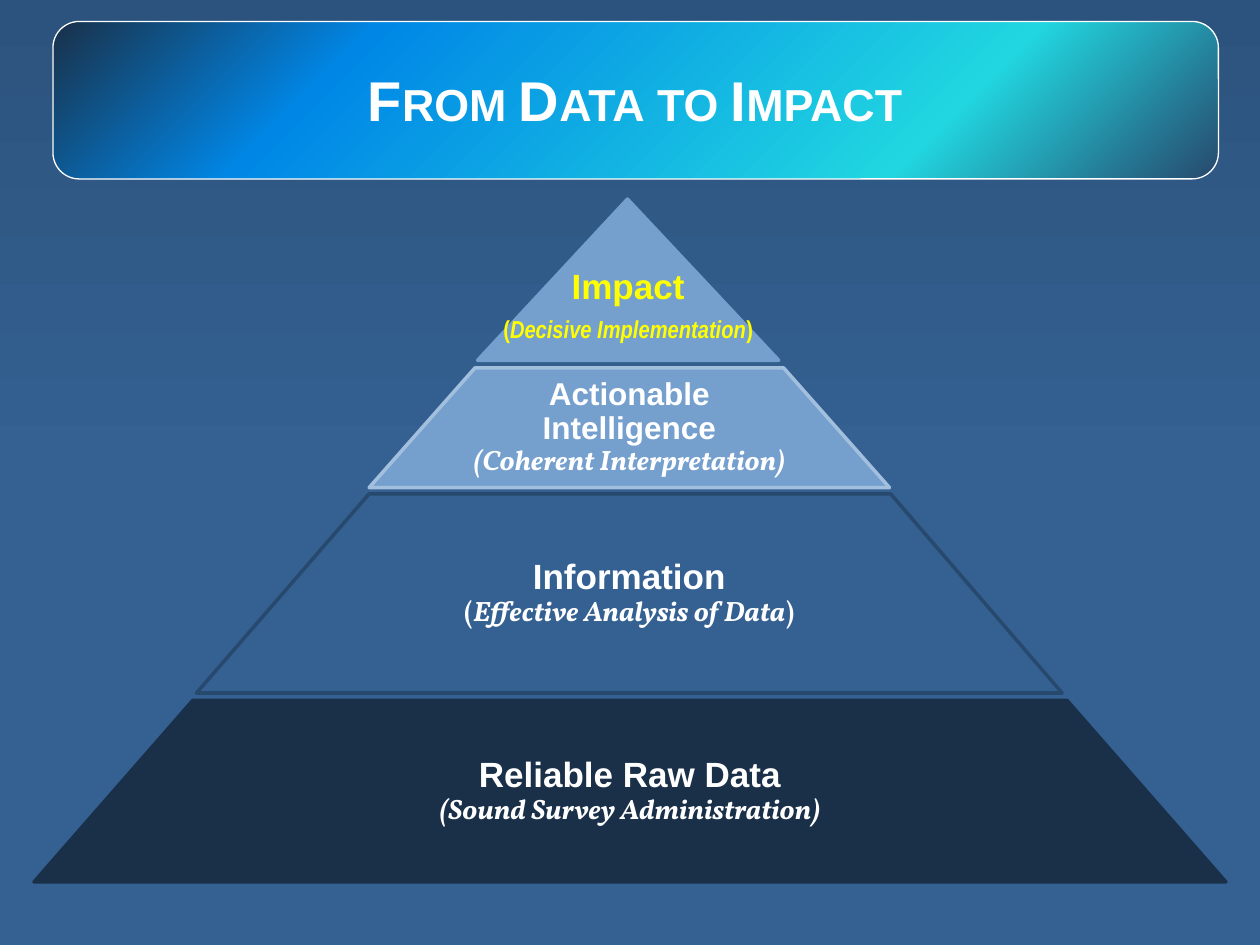
from copy import deepcopy

from pptx import Presentation
from pptx.dml.color import RGBColor
from pptx.enum.shapes import MSO_SHAPE
from pptx.enum.text import MSO_ANCHOR, PP_ALIGN
from pptx.oxml.ns import qn
from pptx.util import Inches, Pt

WHITE = RGBColor(0xFF, 0xFF, 0xFF)
YELLOW = RGBColor(0xFF, 0xFF, 0x00)
NAVY = RGBColor(0x1A, 0x30, 0x49)
SLATE = RGBColor(0x27, 0x49, 0x6D)
DEEP = RGBColor(0x2C, 0x53, 0x7D)
STEEL = RGBColor(0x34, 0x61, 0x92)
SKY = RGBColor(0x75, 0xA0, 0xCE)
PALE = RGBColor(0xA3, 0xBF, 0xDE)
AZURE = RGBColor(0x00, 0x87, 0xE6)
TURQUOISE = RGBColor(0x21, 0xD6, 0xE0)


def set_gradient(fill, element, angle, stops):
    fill.gradient()
    fill.gradient_angle = angle
    gs_list = next(element.iter(qn("a:gsLst")))
    while len(gs_list) < len(stops):
        gs_list.append(deepcopy(gs_list[0]))
    for stop, (position, color) in zip(fill.gradient_stops, stops):
        stop.position = position
        stop.color.rgb = color


def add_run(p, text, size, font, color, italic=False):
    r = p.add_run()
    r.text = text
    r.font.size = Pt(size)
    r.font.name = font
    r.font.bold = True
    r.font.italic = italic
    r.font.color.rgb = color
    return r


prs = Presentation()
prs.slide_width, prs.slide_height = Inches(10), Inches(7.5)
s = prs.slides.add_slide(prs.slide_layouts[6])

# Background, darker at the top
bg = s.background
set_gradient(bg.fill, s.element, 270, [(0, DEEP), (0.5, STEEL)])

# Title banner
sp = s.shapes.add_shape(MSO_SHAPE.ROUNDED_RECTANGLE, Inches(0.42), Inches(0.17),
                        Inches(9.25), Inches(1.25))
sp.shadow.inherit = False
set_gradient(sp.fill, sp.element, 315,
             [(0, NAVY), (0.25, AZURE), (0.75, TURQUOISE), (1, SLATE)])
sp.line.color.rgb = WHITE
sp.line.width = Pt(0.75)

# Title
tf = s.shapes.add_textbox(Inches(0.5), Inches(0.33), Inches(9.08), Inches(0.92)).text_frame
tf.word_wrap = True
tf.vertical_anchor = MSO_ANCHOR.MIDDLE
p = tf.paragraphs[0]
p.alignment = PP_ALIGN.CENTER
r = add_run(p, "From Data to Impact", 32, "Arial", WHITE)
r.font._element.set("cap", "small")

# Pyramid levels: top y, bottom y, top left/right x, bottom left/right x, fill, line,
# side inset, top inset, text colour, heading, heading size, gap, note font, note size, note runs
levels = [
    (1.58, 2.86, (4.98, 4.98), (3.79, 6.18), SKY, SKY, 0.02, 0.45, YELLOW,
     "Impact", 20, 6, "Arial Narrow", 14,
     [("(", False), ("Decisive Implementation", True), (")", False)]),
    (2.92, 3.87, (3.77, 6.22), (2.93, 7.06), SKY, PALE, 0.78, 0.03, WHITE,
     "Actionable Intelligence", 18, 0, "Vollkorn", 16,
     [("(Coherent Interpretation)", True)]),
    (3.92, 5.5, (2.93, 7.07), (1.56, 8.43), STEEL, SLATE, 1.2, 0.03, WHITE,
     "Information", 20, 0, "Vollkorn", 16,
     [("(", False), ("Effective Analysis of Data", True), (")", False)]),
    (5.56, 7, (1.53, 8.47), (0.27, 9.73), NAVY, NAVY, 1.61, 0.03, WHITE,
     "Reliable Raw Data", 20, 0, "Vollkorn", 16,
     [("(Sound Survey Administration)", True)]),
]

for (top, bottom, (tl, tr), (bl, br), fill, line, side, inset, color,
     heading, size, gap, note_font, note_size, note) in levels:
    corners = [(Inches(x), Inches(y))
               for x, y in ((bl, bottom), (tl, top), (tr, top), (br, bottom))]
    builder = s.shapes.build_freeform(*corners[0])
    builder.add_line_segments(corners[1:], close=True)
    sp = builder.convert_to_shape()
    sp.shadow.inherit = False
    sp.fill.solid()
    sp.fill.fore_color.rgb = fill
    sp.line.color.rgb = line
    sp.line.width = Pt(2)

    tf = sp.text_frame
    tf.word_wrap = True
    tf.vertical_anchor = MSO_ANCHOR.MIDDLE
    tf.margin_left = tf.margin_right = Inches(side)
    tf.margin_top, tf.margin_bottom = Inches(inset), Inches(0.03)
    p = tf.paragraphs[0]
    add_run(p, heading, size, "Arial", color)
    p = tf.add_paragraph()
    p.space_before = Pt(gap)
    for text, italic in note:
        add_run(p, text, note_size, note_font, color, italic)
    for p in tf.paragraphs:
        p.alignment = PP_ALIGN.CENTER
        p.line_spacing = 0.9

prs.save("out.pptx")
